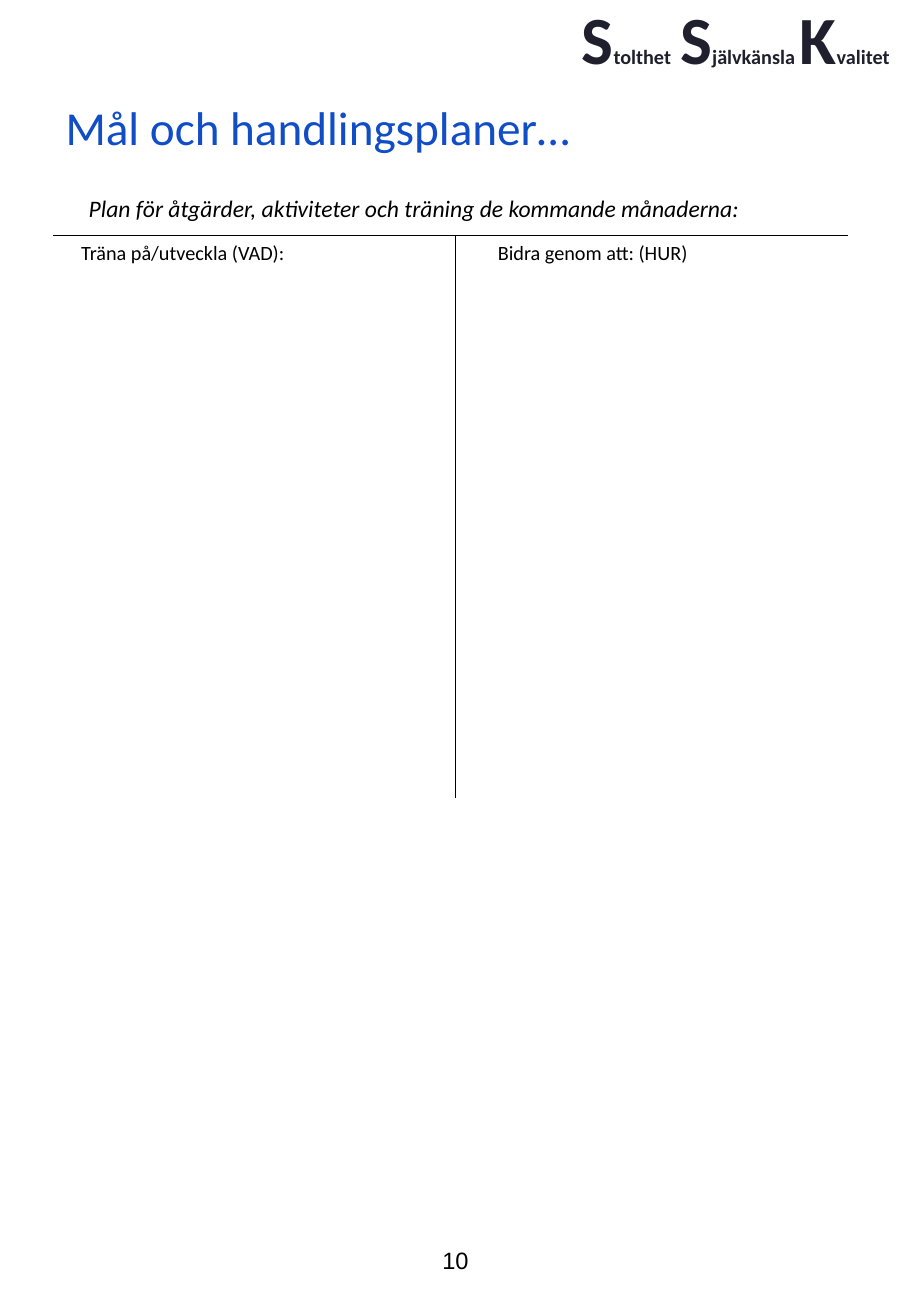
from lxml import etree
from pptx import Presentation
from pptx import util as u
from pptx.dml.color import RGBColor
from pptx.enum import shapes, text
from pptx.oxml.ns import qn

SCALE = 9144
INK, BLACK, BLUE = "1F1F2E", "000000", "104DC6"


def px(n):
    return u.Emu(n * SCALE)


def paint(color, code):
    color.rgb = RGBColor.from_string(code)


def place(shape, box):
    shape.left, shape.top, shape.width, shape.height = map(px, box)
    return shape


def write(shape, runs, font="Calibri", color=BLACK, bold=False, italic=False,
          align="LEFT", anchor="TOP", space=1.0, hang=0):
    frame = shape.text_frame
    frame.word_wrap = True
    frame.auto_size = text.MSO_AUTO_SIZE.NONE
    frame.vertical_anchor = getattr(text.MSO_ANCHOR, anchor)
    para = frame.paragraphs[0]
    para.alignment = getattr(text.PP_ALIGN, align)
    para.line_spacing = space
    para.space_before = u.Pt(0)
    props = para._p.get_or_add_pPr()
    props.set("marL", str(px(hang)))
    props.set("indent", str(px(-hang)))
    etree.SubElement(props, qn("a:buNone"))
    for words, size in runs:
        run = para.add_run()
        run.text = words
        run.font.name, run.font.size = font, u.Pt(size)
        run.font.bold, run.font.italic = bold, italic
        paint(run.font.color, color)


def label(slide, box, runs, **form):
    write(slide.shapes.add_textbox(*map(px, box)), runs, **form)


def rule(slide, ends):
    line = slide.shapes.add_connector(shapes.MSO_CONNECTOR.STRAIGHT, *map(px, ends))
    paint(line.line.color, BLACK)
    line.line.width = u.Pt(0.75)
    etree.SubElement(line._element.spPr, qn("a:effectLst"))


def motto(slide, box):
    runs = [("S", 40), ("tolthet", 12), (" ", 24), ("S", 40),
            ("jälvkänsla ", 12), ("K", 40), ("valitet", 12)]
    label(slide, box, runs, color=INK, bold=True)


def heading(slide, box):
    left, top, width, height = box
    write(place(slide.shapes.title, (left, top, width, 87)),
          [("Mål och handlingsplaner…", 28)], color=BLUE, anchor="MIDDLE")
    write(place(slide.placeholders[1], (left + 19, top + 95, 635, height - 95)),
          [("Plan för åtgärder, aktiviteter och träning de kommande månaderna:", 14)],
          italic=True, space=0.95, hang=38)


def plan(slide, box):
    left, top, width, height = box
    mid = left + 331
    label(slide, (left + 13, top, 300, 27), [("Träna på/utveckla (VAD):", 12)], space=0.95)
    label(slide, (mid + 25, top, 298, 27), [("Bidra genom att: (HUR)", 12)], space=0.95)
    rule(slide, (mid, top, mid, top + height))
    rule(slide, (left, top, left + width, top))


def main():
    deck = Presentation()
    deck.slide_width, deck.slide_height = px(750), px(1083)
    slide = deck.slides.add_slide(deck.slide_layouts[1])
    motto(slide, (469, -7, 291, 96))
    heading(slide, (44, 61, 669, 128))
    plan(slide, (44, 194, 654, 463))
    label(slide, (297, 1020, 156, 40), [("10", 14)], font="Arial", align="CENTER")
    deck.save("out.pptx")


if __name__ == "__main__":
    main()
